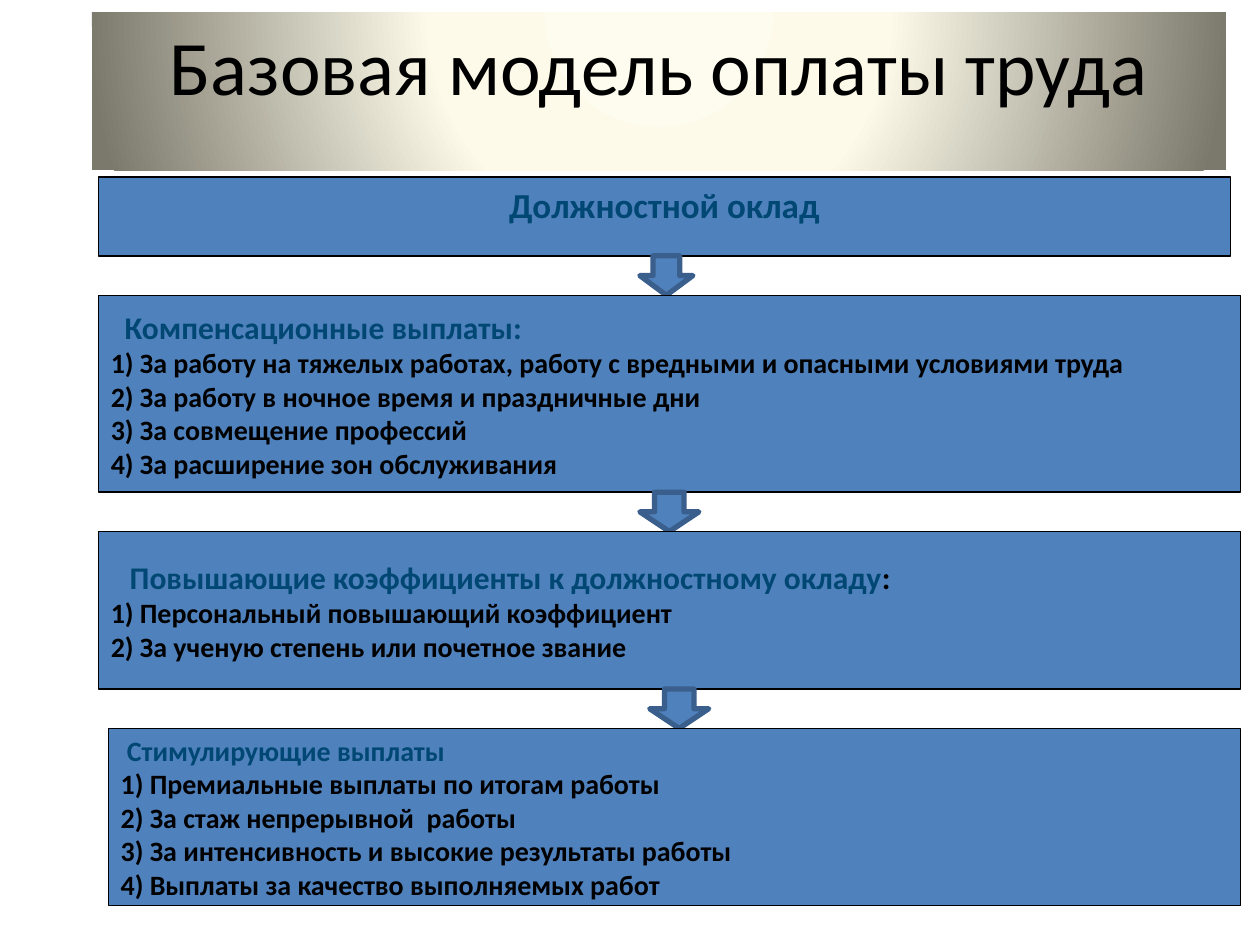
import pptx
import pptx.util
import pptx.dml.color
import pptx.enum.shapes
import pptx.enum.text
import pptx.oxml
import pptx.oxml.ns

COLORS = {
    "box": "4F81BD",
    "border": "000000",
    "arrow_edge": "3A5F8C",
    "heading": "004873",
    "text": "000000",
    "glow": "FEFCEE",
    "cream": "FDFAEA",
    "edge": "7B796B",
}
FONT = "Calibri"
WIDTH, HEIGHT = pptx.util.Inches(10), pptx.util.Inches(7.5)
COLUMN, ROW = WIDTH / 128, HEIGHT / 24
GAP_ROWS = 1
FIRST_ROW = 4.5
ALIGN = pptx.enum.text.PP_ALIGN
ANCHOR = pptx.enum.text.MSO_ANCHOR
SHAPE = pptx.enum.shapes.MSO_SHAPE

STEPS = [
    {"left": 10, "columns": 115, "rows": 2, "arrow": (65, 5.4), "size": 20,
     "align": ALIGN.CENTER, "anchor": ANCHOR.TOP,
     "heading": [("Должностной оклад", "heading")], "items": []},
    {"left": 10, "columns": 116, "rows": 5, "arrow": (65, 6), "size": 18, "indent": 0.11,
     "heading": [("Компенсационные выплаты:", "heading")],
     "items": [
         "За работу на тяжелых работах, работу с вредными и опасными условиями труда",
         "За работу в ночное время и праздничные дни",
         "За совмещение профессий",
         "За расширение зон обслуживания"]},
    {"left": 10, "columns": 116, "rows": 4, "arrow": (66, 6), "size": 18, "indent": 0.15,
     "heading": [("Повышающие коэффициенты к должностному окладу", "heading"), (":", "text")],
     "items": [
         "Персональный повышающий коэффициент",
         "За ученую степень или почетное звание"]},
    {"left": 11, "columns": 115, "rows": 4.5, "arrow": None, "size": 16, "indent": 0.05,
     "heading": [("Стимулирующие выплаты", "heading")],
     "items": [
         "Премиальные выплаты по итогам работы",
         "За стаж непрерывной  работы",
         "За интенсивность и высокие результаты работы",
         "Выплаты за качество выполняемых работ"]},
]


def rgb(name):
    return pptx.dml.color.RGBColor.from_string(COLORS[name])


def grid_box(left, top, columns, rows):
    return [round(value) for value in (left * COLUMN, top * ROW, columns * COLUMN, rows * ROW)]


def add_box(page, kind, box, fill=None, line=None, line_width=0.75):
    shape = page.shapes.add_shape(kind, *box)
    shape.shadow.inherit = False
    if fill:
        shape.fill.solid()
        shape.fill.fore_color.rgb = rgb(fill)
    else:
        shape.fill.background()
    if line:
        shape.line.color.rgb = rgb(line)
        shape.line.width = pptx.util.Pt(line_width)
    else:
        shape.line.fill.background()
    return shape


def write(para, text, size=16, color="text", bold=True, align=ALIGN.LEFT):
    para.alignment = align
    span = para.add_run()
    span.text = text
    span.font.name = FONT
    span.font.size = pptx.util.Pt(size)
    span.font.bold = bold
    span.font.color.rgb = rgb(color)


def fill_radial(shape):
    stops = "".join(
        f'<a:gs pos="{position * 1000}"><a:srgbClr val="{COLORS[name]}"/></a:gs>'
        for position, name in ((0, "glow"), (40, "cream"), (100, "edge")))
    gradient = pptx.oxml.parse_xml(
        f'<a:gradFill {pptx.oxml.ns.nsdecls("a")} rotWithShape="1"><a:gsLst>{stops}</a:gsLst>'
        '<a:path path="circle"><a:fillToRect l="50000" t="-80000" r="50000" b="180000"/>'
        '</a:path></a:gradFill>')
    properties = shape.element.spPr
    properties.replace(properties.find(pptx.oxml.ns.qn("a:noFill")), gradient)


def add_title(page, box, text):
    banner = add_box(page, SHAPE.RECTANGLE, box)
    fill_radial(banner)
    frame = banner.text_frame
    frame.word_wrap = True
    frame.vertical_anchor = ANCHOR.TOP
    write(frame.paragraphs[0], text, size=44, bold=False, align=ALIGN.CENTER)


def add_step(page, box, step):
    frame = add_box(page, SHAPE.RECTANGLE, box, "box", "border").text_frame
    frame.word_wrap = True
    frame.vertical_anchor = step.get("anchor", ANCHOR.MIDDLE)
    heading = frame.paragraphs[0]
    heading_indent = pptx.util.Inches(step.get("indent", 0))
    heading._p.get_or_add_pPr().set("marL", str(heading_indent))
    for text, color in step["heading"]:
        write(heading, text, size=step["size"], color=color, align=step.get("align", ALIGN.LEFT))
    for number, item in enumerate(step["items"], 1):
        write(frame.add_paragraph(), f"{number}) {item}")


def add_flow(page, steps, top):
    for step in steps:
        add_step(page, grid_box(step["left"], top, step["columns"], step["rows"]), step)
        top += step["rows"]
        if step["arrow"]:
            left, columns = step["arrow"]
            add_box(page, SHAPE.DOWN_ARROW, grid_box(left, top, columns, GAP_ROWS),
                    "box", "arrow_edge", 3)
        top += GAP_ROWS


def main():
    deck = pptx.Presentation()
    deck.slide_width, deck.slide_height = WIDTH, HEIGHT
    page = deck.slides.add_slide(deck.slide_layouts[6])
    add_flow(page, STEPS, FIRST_ROW)
    add_title(page, grid_box(9.35, 0.32, 115.2, 4), "Базовая модель оплаты труда")
    deck.save("out.pptx")


if __name__ == "__main__":
    main()
